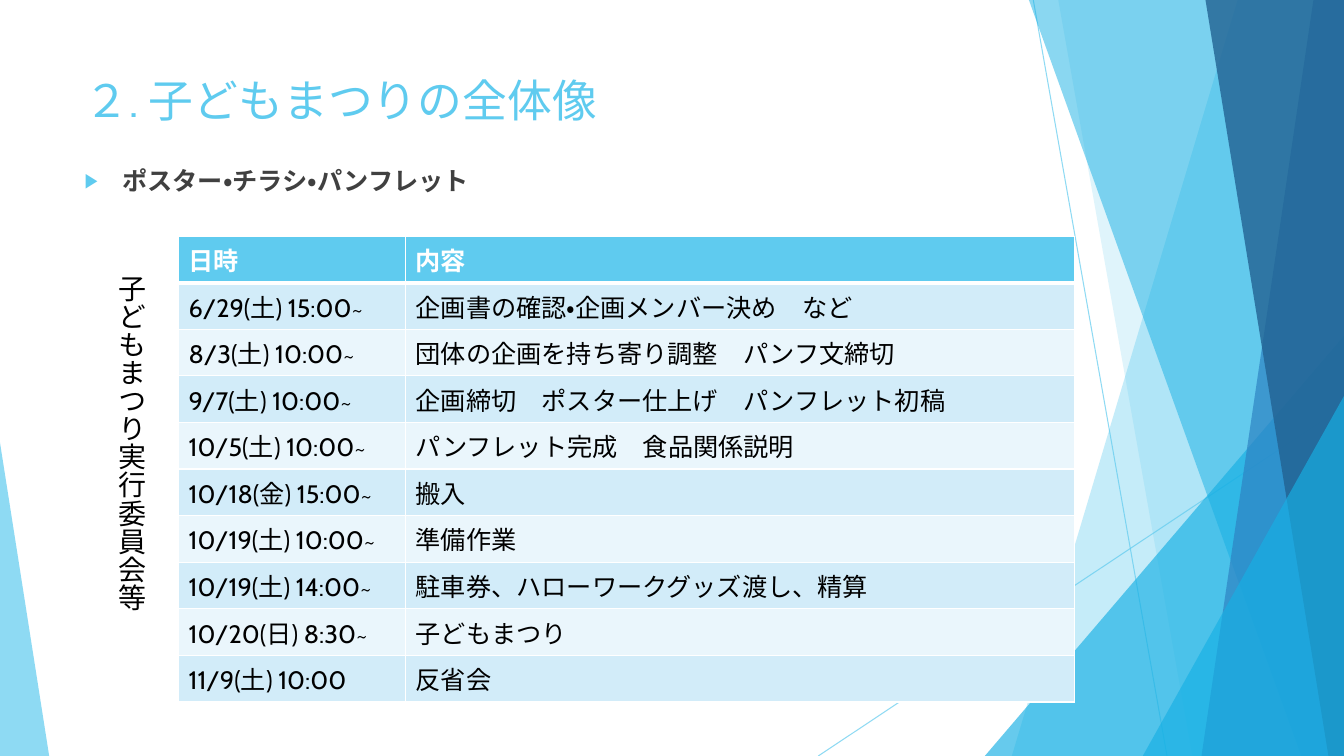
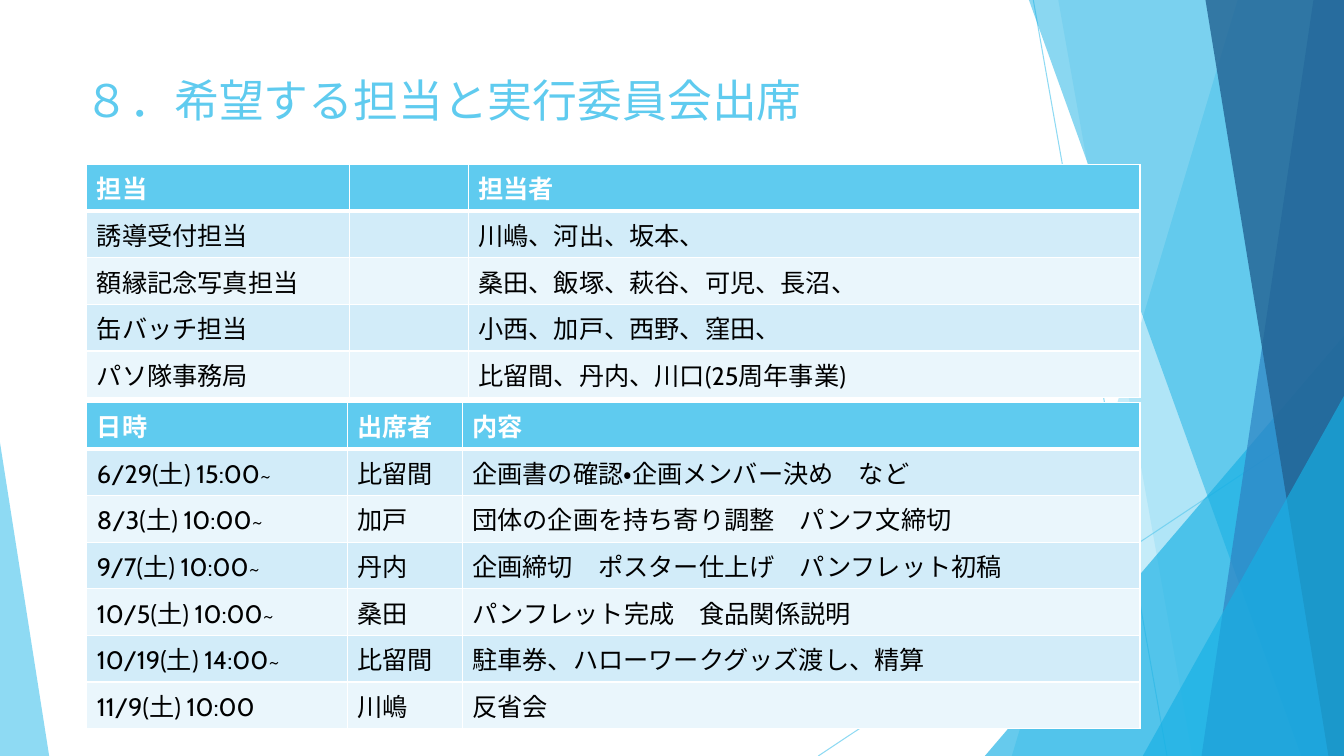
"""Build two slides on the schedule and staffing of a children's festival."""
from dataclasses import dataclass
from typing import NamedTuple, Sequence, Union

from lxml import etree
from pptx import Presentation
from pptx import util as u
from pptx.dml.color import RGBColor
from pptx.enum import lang, shapes, text
from pptx.oxml.ns import qn

SKY = RGBColor(0x5F, 0xCB, 0xEF)
CYAN = RGBColor(0x17, 0xB0, 0xE4)
BLUE = RGBColor(0x2E, 0x83, 0xC3)
NAVY = RGBColor(0x22, 0x62, 0x92)
BAND_DARK = RGBColor(0xD2, 0xEC, 0xF9)
BAND_LIGHT = RGBColor(0xEA, 0xF6, 0xFC)
WHITE = RGBColor(0xFF, 0xFF, 0xFF)
BLACK = RGBColor(0, 0, 0)
GREY = RGBColor(0x40, 0x40, 0x40)
FONT = "Cabin"
WIDTH, HEIGHT = 33.87, 19.05
ROW_HEIGHT = 1.17


@dataclass(frozen=True)
class Ray:
    """A thin line across the decoration."""
    start: tuple[float, float]
    end: tuple[float, float]
    color: RGBColor = SKY
    opacity: int = 70


@dataclass(frozen=True)
class Beam:
    """A full-height panel from a slanted left side to the right edge."""
    top_x: float
    foot_x: float
    color: RGBColor
    opacity: int


@dataclass(frozen=True)
class Wedge:
    """A triangle standing on the bottom edge."""
    left: float
    top: float
    right: float
    apex: float
    color: RGBColor
    opacity: int


class Meeting(NamedTuple):
    """A committee meeting and who attends it."""
    when: str
    attendee: str
    agenda: str


@dataclass(frozen=True)
class Grid:
    """A table with its place, column widths and rows."""
    left: float
    top: float
    columns: Sequence[float]
    rows: Sequence[Sequence[str]]


Decoration = Union[Ray, Beam, Wedge]

DECORATIONS: list[Decoration] = [
    Ray((26.04, 0), (29.41, HEIGHT)),
    Ray((WIDTH, 10.24), (20.62, HEIGHT)),
    Beam(31.19, 25.5, SKY, 36),
    Beam(26.67, 30.05, SKY, 20),
    Wedge(24.82, 8.46, WIDTH, 1, CYAN, 66),
    Beam(25.93, 32.79, CYAN, 50),
    Beam(33.1, 30.28, BLUE, 70),
    Beam(30.38, 33.48, NAVY, 80),
    Wedge(28.8, 9.98, WIDTH, 1, CYAN, 66),
    Wedge(0, 11.15, 1.24, 0, SKY, 70),
]

MEETINGS = [
    Meeting("6/29(土) 15:00~", "比留間", "企画書の確認・企画メンバー決め　など"),
    Meeting("8/3(土) 10:00~", "加戸", "団体の企画を持ち寄り調整　パンフ文締切"),
    Meeting("9/7(土) 10:00~", "丹内", "企画締切　ポスター仕上げ　パンフレット初稿"),
    Meeting("10/5(土) 10:00~", "桑田", "パンフレット完成　食品関係説明"),
    Meeting("10/18(金) 15:00~", "", "搬入"),
    Meeting("10/19(土) 10:00~", "", "準備作業"),
    Meeting("10/19(土) 14:00~", "比留間", "駐車券、ハローワークグッズ渡し、精算"),
    Meeting("10/20(日) 8:30~", "", "子どもまつり"),
    Meeting("11/9(土) 10:00", "川嶋", "反省会"),
]

SCHEDULE = Grid(4.5, 5.95, (5.72, 16.85), [
    ("日時", "内容"), *((m.when, m.agenda) for m in MEETINGS)])
ROLES = Grid(2.19, 4.15, (6.62, 2.99, 16.93), [
    ("担当", "", "担当者"),
    ("誘導受付担当", "", "川嶋、河出、坂本、"),
    ("額縁記念写真担当", "", "桑田、飯塚、萩谷、可児、長沼、"),
    ("缶バッチ担当", "", "小西、加戸、西野、窪田、"),
    ("パソ隊事務局", "", "比留間、丹内、川口(25周年事業)"),
])
ATTENDANCE = Grid(2.19, 10.14, (6.56, 2.9, 17.08), [
    ("日時", "出席者", "内容"), *(m for m in MEETINGS if m.attendee)])


def style(paragraph, size: float, color: RGBColor, bold: bool = False) -> None:
    """Set the font of a left-aligned paragraph."""
    paragraph.alignment = text.PP_ALIGN.LEFT
    font = paragraph.font
    font.name, font.size, font.bold = FONT, u.Pt(size), bold
    font.color.rgb = color
    font.language_id = lang.MSO_LANGUAGE_ID.JAPANESE


def place(shape, left: float, top: float, width: float, height: float) -> None:
    """Move and size a shape in centimetres."""
    shape.left, shape.top = u.Cm(left), u.Cm(top)
    shape.width, shape.height = u.Cm(width), u.Cm(height)


def draw_decoration(slide, item: Decoration):
    """Draw one translucent part of the decoration."""
    if isinstance(item, Ray):
        part = slide.shapes.add_connector(
            shapes.MSO_CONNECTOR.STRAIGHT, *map(u.Cm, item.start + item.end))
        part.line.color.rgb = item.color
        part.line.width = u.Pt(0.75)
        etree.SubElement(part.element.spPr, qn("a:effectLst"))
    else:
        if isinstance(item, Beam):
            outline = slide.shapes.build_freeform(u.Cm(item.top_x), 0)
            corners = [(WIDTH, 0), (WIDTH, HEIGHT), (item.foot_x, HEIGHT)]
            outline.add_line_segments([(u.Cm(x), u.Cm(y)) for x, y in corners])
            part = outline.convert_to_shape()
        else:
            part = slide.shapes.add_shape(
                shapes.MSO_SHAPE.ISOSCELES_TRIANGLE, u.Cm(item.left), u.Cm(item.top),
                u.Cm(item.right - item.left), u.Cm(HEIGHT - item.top))
            part.adjustments[0] = item.apex
        part.fill.solid()
        part.fill.fore_color.rgb = item.color
        part.line.fill.background()
        part.shadow.inherit = False
    for color in part.element.spPr.iter(qn("a:srgbClr")):
        etree.SubElement(color, qn("a:alpha"), val=str(item.opacity * 1000))
    return part


def decorate_master(prs, slide) -> None:
    """Put the decoration on the master, behind its placeholders."""
    tree = prs.slide_master.shapes.element
    for index, item in enumerate(DECORATIONS):
        part = draw_decoration(slide, item).element
        next(part.iter(qn("p:cNvPr"))).set("id", str(100 + index))
        tree.insert(2 + index, part)


def set_title(slide, wording: str) -> None:
    """Fill the title placeholder in the shared style."""
    title = slide.shapes.title
    place(title, 1.88, 1.7, 23.88, 3.66)
    frame = title.text_frame
    frame.text = wording
    frame.auto_size = text.MSO_AUTO_SIZE.NONE
    frame.vertical_anchor = text.MSO_ANCHOR.TOP
    style(frame.paragraphs[0], 32, SKY)


def set_topic(slide, wording: str) -> None:
    """Fill the body placeholder with one bulleted line."""
    body = slide.placeholders[1]
    place(body, 1.88, 4.04, 23.88, 12.73)
    frame = body.text_frame
    frame.text = wording
    frame.auto_size = text.MSO_AUTO_SIZE.NONE
    topic = frame.paragraphs[0]
    topic.space_before = u.Pt(0)
    props = topic._p.get_or_add_pPr()
    props.set("marL", str(u.Cm(0.95)))
    props.set("indent", str(u.Cm(-0.95)))
    bullet_color = etree.SubElement(props, qn("a:buClr"))
    etree.SubElement(bullet_color, qn("a:srgbClr"), val=str(SKY))
    etree.SubElement(props, qn("a:buSzPct"), val="80000")
    etree.SubElement(props, qn("a:buChar"), char="▶")
    style(topic, 18, GREY, bold=True)


def add_border(cell, side: str, width: float) -> None:
    """Add a white border on one side of a cell."""
    border = etree.SubElement(
        cell._tc.get_or_add_tcPr(), qn(f"a:ln{side}"), w=str(u.Pt(width)))
    fill = etree.SubElement(border, qn("a:solidFill"))
    etree.SubElement(fill, qn("a:srgbClr"), val=str(WHITE))


def draw_grid(slide, grid: Grid) -> None:
    """Draw a table with a header and alternating bands."""
    count = len(grid.rows)
    table = slide.shapes.add_table(
        count, len(grid.columns), u.Cm(grid.left), u.Cm(grid.top),
        u.Cm(sum(grid.columns)), u.Cm(count * ROW_HEIGHT)).table
    for column, width in zip(table.columns, grid.columns):
        column.width = u.Cm(width)
    for index, (row, entries) in enumerate(zip(table.rows, grid.rows)):
        row.height = u.Cm(ROW_HEIGHT)
        header = index == 0
        band = SKY if header else BAND_DARK if index % 2 else BAND_LIGHT
        for cell, entry in zip(row.cells, entries):
            cell.text = entry
            style(cell.text_frame.paragraphs[0], 18, WHITE if header else BLACK, header)
            for side in "LRTB":
                under_header = (index, side) in ((0, "B"), (1, "T"))
                add_border(cell, side, 3 if under_header else 1)
            cell.fill.solid()
            cell.fill.fore_color.rgb = band


def draw_vertical_label(slide, wording: str) -> None:
    """Write a label that runs from top to bottom."""
    label = slide.shapes.add_textbox(u.Cm(2.49), u.Cm(6.68), u.Cm(1.37), u.Cm(8.81))
    frame = label.text_frame
    frame.text = wording
    frame.word_wrap = False
    frame.auto_size = text.MSO_AUTO_SIZE.SHAPE_TO_FIT_TEXT
    label.element.txBody.bodyPr.set("vert", "eaVert")
    style(frame.paragraphs[0], 20, BLACK)


def main() -> None:
    """Build and save the presentation."""
    prs = Presentation()
    prs.slide_width, prs.slide_height = u.Cm(WIDTH), u.Cm(HEIGHT)

    overview = prs.slides.add_slide(prs.slide_layouts[1])
    decorate_master(prs, overview)
    set_title(overview, "２. 子どもまつりの全体像")
    set_topic(overview, "ポスター・チラシ・パンフレット")
    draw_grid(overview, SCHEDULE)
    draw_vertical_label(overview, "子どもまつり実行委員会等")

    staffing = prs.slides.add_slide(prs.slide_layouts[5])
    set_title(staffing, "８．希望する担当と実行委員会出席")
    draw_grid(staffing, ROLES)
    draw_grid(staffing, ATTENDANCE)

    prs.save("out.pptx")


if __name__ == "__main__":
    main()
